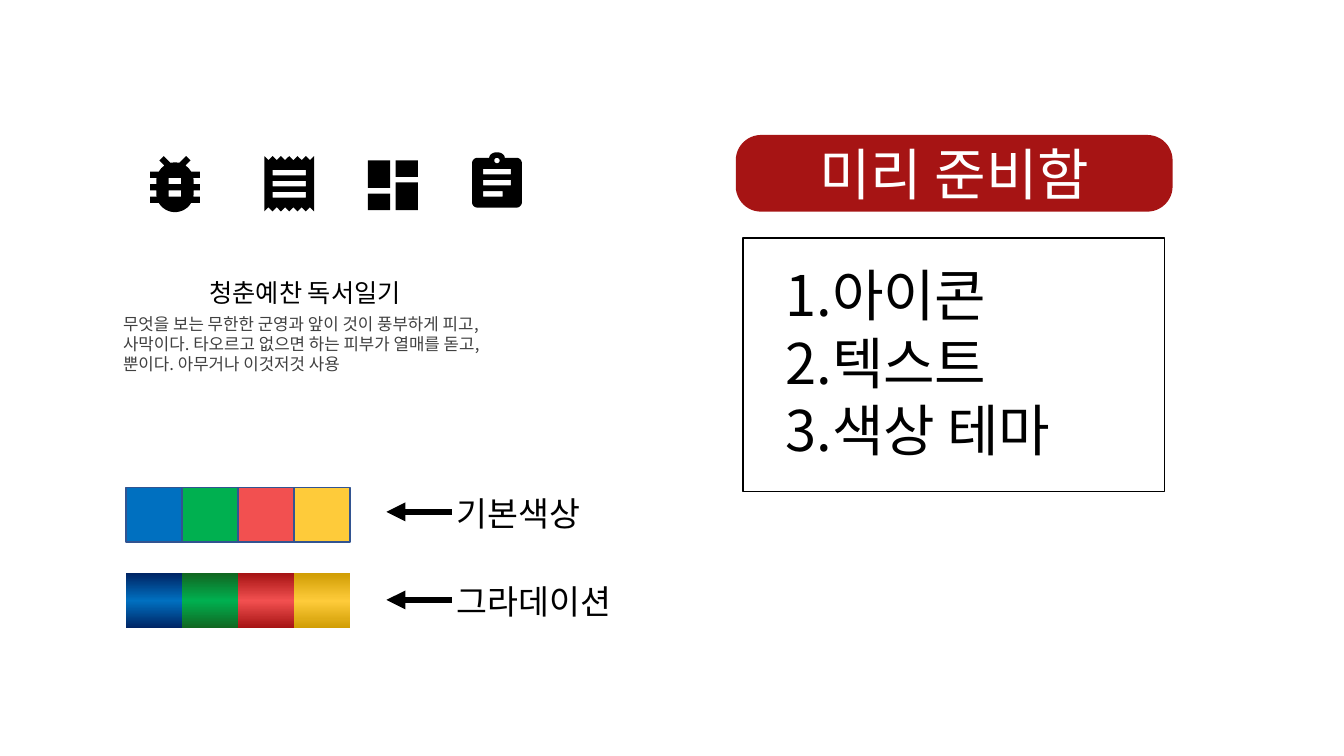
import copy
import math

from lxml import etree
from pptx import Presentation
from pptx import util as u
from pptx.dml.color import RGBColor
from pptx.enum import shapes, text
from pptx.oxml.ns import qn

FONT = "Noto Sans CJK KR"
COLORS = {"black": "000000", "white": "FFFFFF", "body": "404040",
          "outline": "325491", "banner": "A61414"}
# Each swatch: base colour, dark gradient edge
SWATCHES = [("0070C0", "002565"), ("00B050", "116721"),
            ("F25050", "A61414"), ("FECB3A", "D19E05")]

presentation = Presentation()
presentation.slide_width = u.Inches(13.33)
presentation.slide_height = u.Inches(7.5)
slide = presentation.slides.add_slide(presentation.slide_layouts[6])

# Grid of 24 columns by 14 rows
column = presentation.slide_width / 24
row = presentation.slide_height / 14


def write(shape, content, size, color, align=text.PP_ALIGN.LEFT):
    frame = shape.text_frame
    frame.word_wrap = True
    frame.text = content
    for paragraph in frame.paragraphs:
        paragraph.alignment = align
        font = paragraph.runs[0].font
        font.size = u.Pt(size)
        font.name = FONT
        font.color.rgb = RGBColor.from_string(COLORS[color])
        etree.SubElement(font._element, qn("a:ea"), typeface=FONT)


def arc(center_x, center_y, radius_x, radius_y, start, end):
    angles = [math.radians(start + (end - start) * step / 12) for step in range(13)]
    return [(center_x + radius_x * math.cos(angle), center_y + radius_y * math.sin(angle))
            for angle in angles]


# Icon outlines: free contours, then rectangles as left, top, right, bottom
bug_half = [(0, 2), (1.42, 2.17), (3.59, 0), (5, 1.41), (3.37, 3.04), (4.4, 3.9), (5.19, 5),
            (8, 5), (8, 7), (5.91, 7), (6, 8), (6, 9), (8, 9), (8, 11), (6, 11), (6, 12),
            (5.91, 13), (8, 13), (8, 15), (5.19, 15)] + arc(0, 12, 6, 6, 30, 90)
bug = [(8 + x, y) for x, y in bug_half] + [(8 - x, y) for x, y in reversed(bug_half)]
teeth = [(1.5 * step, 1.5 * (step % 2)) for step in range(13)]
receipt = teeth + [(x, 20 - y) for x, y in reversed(teeth)]
clipboard = (arc(9, 2, 2.82, 2, 180, 360) + arc(16, 4, 2, 2, -90, 0)
             + arc(16, 18, 2, 2, 0, 90) + arc(2, 18, 2, 2, 90, 180) + arc(2, 4, 2, 2, 180, 270))
# Left column, top row, width in units, contours, rectangles
icons = [
    (2.68, 2.89, 16, [bug], [(6, 7, 10, 9), (6, 11, 10, 13)]),
    (4.72, 2.89, 18, [receipt], [(3, top, 15, top + 2) for top in (5, 9, 13)]),
    (6.57, 2.97, 18, [], [(0, 0, 8, 10), (0, 12, 8, 18), (10, 8, 18, 18), (10, 0, 18, 6)]),
    (8.43, 2.82, 18, [clipboard, arc(9, 3, 1, 1, 0, 360)],
     [(4, 6, 14, 8), (4, 10, 14, 12), (4, 14, 11, 16)]),
]
for left, top, units, outlines, rectangles in icons:
    contours = outlines + [[(x1, y1), (x1, y2), (x2, y2), (x2, y1)]
                           for x1, y1, x2, y2 in rectangles]
    contours = [[(x * 100, y * 100) for x, y in contour] for contour in contours]
    builder = slide.shapes.build_freeform(*contours[0][0], scale=0.89 * column / units / 100)
    for index, contour in enumerate(contours):
        if index:
            builder.move_to(*contour[0])
        builder.add_line_segments(contour[1:], close=True)
    icon = builder.convert_to_shape(int(left * column), int(top * row))
    icon.shadow.inherit = False
    icon.fill.solid()
    icon.fill.fore_color.rgb = RGBColor.from_string(COLORS["black"])
    icon.line.fill.background()

# Colour swatches: flat row, then gradient row
for top, is_gradient in [(9.03, False), (10.62, True)]:
    for index, (base, edge) in enumerate(SWATCHES):
        swatch = slide.shapes.add_shape(
            shapes.MSO_SHAPE.RECTANGLE, int((2.25 + index) * column), int(top * row),
            int(column), int(1.01 * row))
        swatch.shadow.inherit = False
        if is_gradient:
            swatch.fill.gradient()
            swatch.fill.gradient_angle = 90
            stop_list = swatch._element.spPr.find(qn("a:gradFill")).find(qn("a:gsLst"))
            middle = copy.deepcopy(stop_list[0])
            middle.set("pos", "50000")
            stop_list.insert(1, middle)
            for stop, color in zip(swatch.fill.gradient_stops, (edge, base, edge)):
                stop.color.rgb = RGBColor.from_string(color)
            swatch.line.fill.background()
        else:
            swatch.fill.solid()
            swatch.fill.fore_color.rgb = RGBColor.from_string(base)
            swatch.line.color.rgb = RGBColor.from_string(COLORS["outline"])
            swatch.line.width = u.Pt(1)

# Arrows pointing at the swatch rows
for height in (9.48, 11.11):
    arrow = slide.shapes.add_connector(
        shapes.MSO_CONNECTOR.STRAIGHT, int(8.07 * column), int(height * row),
        int(6.9 * column), int(height * row))
    arrow.line.color.rgb = RGBColor.from_string(COLORS["black"])
    arrow.line.width = u.Pt(4.5)
    etree.SubElement(arrow.line._get_or_add_ln(), qn("a:tailEnd"), type="triangle")
    etree.SubElement(arrow._element.spPr, qn("a:effectLst"))

# Panel and banner on the right
panel = slide.shapes.add_shape(
    shapes.MSO_SHAPE.RECTANGLE, int(13.27 * column), int(4.41 * row),
    int(7.53 * column), int(4.69 * row))
panel.shadow.inherit = False
panel.fill.background()
panel.line.color.rgb = RGBColor.from_string(COLORS["black"])
panel.line.width = u.Pt(1)

banner = slide.shapes.add_shape(
    shapes.MSO_SHAPE.ROUNDED_RECTANGLE, int(13.14 * column), int(2.5 * row),
    int(7.8 * column), int(1.42 * row))
banner.adjustments[0] = 0.33
banner.shadow.inherit = False
banner.fill.solid()
banner.fill.fore_color.rgb = RGBColor.from_string(COLORS["banner"])
banner.line.fill.background()
banner.text_frame.vertical_anchor = text.MSO_ANCHOR.MIDDLE
write(banner, "미리 준비함", 40, "white", text.PP_ALIGN.CENTER)

# Text boxes: left, top, width, height, content, size, colour, alignment
left_align, center = text.PP_ALIGN.LEFT, text.PP_ALIGN.CENTER
sample = ("무엇을 보는 무한한 군영과 앞이 것이 풍부하게 피고, 사막이다. 타오르고 없으면 "
          "하는 피부가 열매를 돋고, 뿐이다. 아무거나 이것저것 사용")
text_boxes = [
    (2.02, 5.04, 6.86, 0.75, "청춘예찬 독서일기", 18, "black", center),
    (2.02, 5.71, 6.86, 1.33, sample, 12, "body", left_align),
    (7.98, 9.03, 5.64, 0.93, "기본색상", 24, "black", left_align),
    (7.98, 10.66, 5.64, 0.93, "그라데이션", 24, "black", left_align),
    (13.85, 4.74, 6.86, 3.96, "아이콘\n텍스트\n색상 테마", 40, "black", left_align),
]
for left, top, width, height, content, size, color, align in text_boxes:
    box = slide.shapes.add_textbox(int(left * column), int(top * row),
                                   int(width * column), int(height * row))
    write(box, content, size, color, align)

# Numbering of the list, the last text box
for paragraph in box.text_frame.paragraphs:
    properties = paragraph._p.get_or_add_pPr()
    properties.set("marL", str(u.Inches(0.38)))
    properties.set("indent", str(-u.Inches(0.38)))
    etree.SubElement(properties, qn("a:buFont"), typeface="+mj-lt")
    etree.SubElement(properties, qn("a:buAutoNum"), type="arabicPeriod")

presentation.save("out.pptx")
